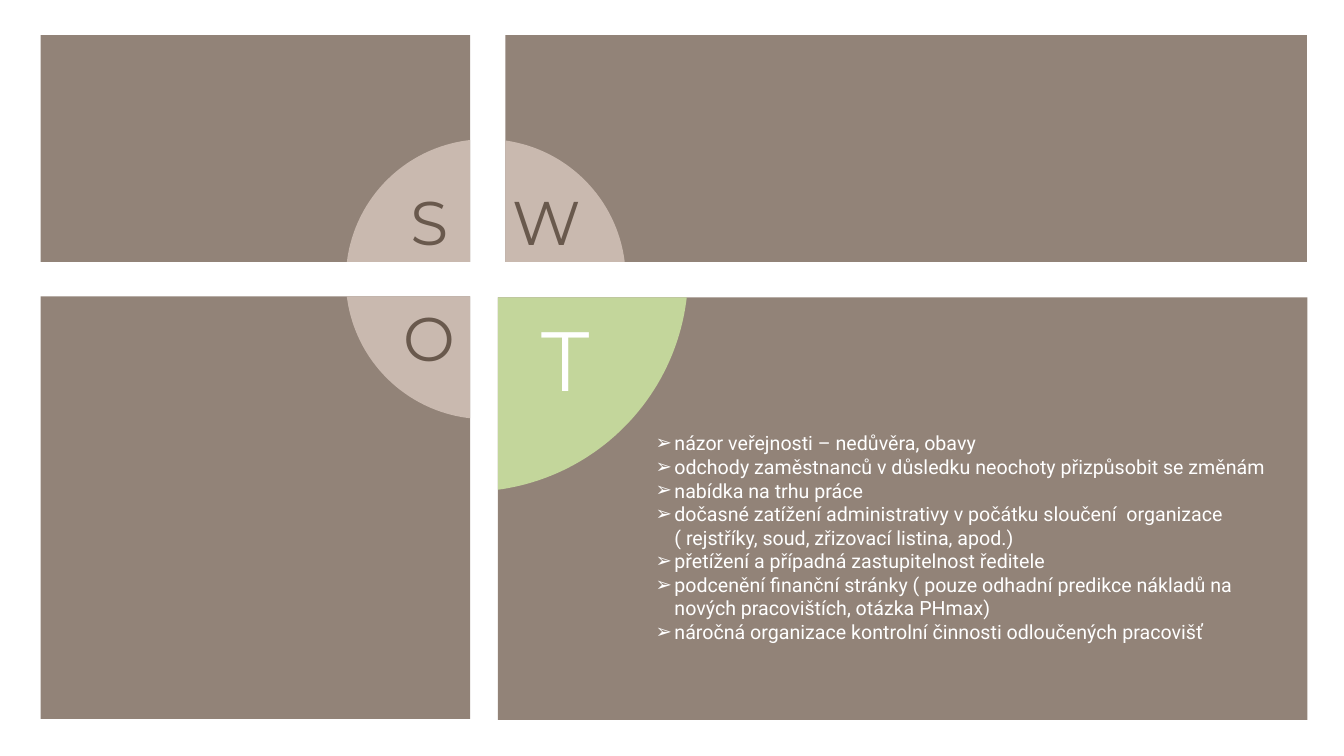
"""Builds a SWOT slide with the threats quadrant highlighted."""
import math

from lxml import etree
from pptx import Presentation
from pptx.dml.color import RGBColor
from pptx.enum.shapes import MSO_SHAPE
from pptx.enum.text import MSO_ANCHOR, PP_ALIGN
from pptx.oxml.ns import qn
from pptx.util import Pt

RECTANGLE = MSO_SHAPE.RECTANGLE
MIDDLE, BOTTOM = MSO_ANCHOR.MIDDLE, MSO_ANCHOR.BOTTOM
LEFT, CENTER = PP_ALIGN.LEFT, PP_ALIGN.CENTER

TAUPE = RGBColor(0x92, 0x83, 0x78)
BEIGE = RGBColor(0xC9, 0xB9, 0xAF)
GREEN = RGBColor(0xC3, 0xD6, 0x9B)
BROWN = RGBColor(0x69, 0x59, 0x4D)
WHITE = RGBColor(0xFF, 0xFF, 0xFF)

HUB = (347, 199.4, 100)
THREAT_HUB = (334.8, 194.4, 156.8)

THREATS = [
    "názor veřejnosti – nedůvěra, obavy",
    "odchody zaměstnanců v důsledku neochoty přizpůsobit se změnám",
    "nabídka na trhu práce",
    "dočasné zatížení administrativy v počátku sloučení  organizace ( rejstříky, soud, zřizovací listina, apod.)",
    "přetížení a případná zastupitelnost ředitele",
    "podcenění finanční stránky ( pouze odhadní predikce nákladů na nových pracovištích, otázka PHmax)",
    "náročná organizace kontrolní činnosti odloučených pracovišť",
]

# letter, panel box, wedge corner, circle, wedge colour, letter box, size, letter colour
QUADRANTS = [
    ("T", (355.7, 212.4, 578.2, 301.8), (355.7, 212.4), THREAT_HUB, GREEN,
     (385, 219.6, 38.2, 72.7), 60, WHITE),
    ("W", (361, 25, 572.5, 162), (361, 187), HUB, BEIGE,
     (364, 131, 52.6, 53.3), 44, BROWN),
    ("O", (29, 211.7, 306.8, 301.8), (335.8, 211.7), HUB, BEIGE,
     (287.3, 213.8, 38.2, 53.3), 44, BROWN),
    ("S", (29, 25, 306.8, 162), (335.8, 187), HUB, BEIGE,
     (292.3, 131, 28.8, 53.3), 44, BROWN),
]


class SwotSlide:
    """Draws styled elements on one slide, with lengths in points."""

    def __init__(self, slide):
        self.shapes = slide.shapes

    def paint(self, shape, color):
        shape.shadow.inherit = False
        shape.fill.solid()
        shape.fill.fore_color.rgb = color
        shape.line.fill.background()

    def panel(self, box, color):
        self.paint(self.shapes.add_shape(RECTANGLE, *map(Pt, box)), color)

    def wedge(self, corner, circle, color):
        (x, y), (center_x, center_y, radius) = corner, circle
        side_x = math.copysign(1, x - center_x)
        side_y = math.copysign(1, y - center_y)
        first = math.asin(abs(y - center_y) / radius)
        last = math.acos(abs(x - center_x) / radius)
        pull = 4 / 3 * math.tan((last - first) / 4)

        def on_circle(angle, tangent):
            across = math.cos(angle) - tangent * math.sin(angle)
            down = math.sin(angle) + tangent * math.cos(angle)
            return (Pt(center_x + side_x * radius * across),
                    Pt(center_y + side_y * radius * down))

        outline = self.shapes.build_freeform(Pt(x), Pt(y))
        outline.add_line_segments([on_circle(first, 0), on_circle(first, pull),
                                   on_circle(last, -pull), on_circle(last, 0)])
        wedge = outline.convert_to_shape()
        controls = wedge._element.findall(".//" + qn("a:lnTo"))[1:4]
        curve = etree.Element(qn("a:cubicBezTo"))
        controls[0].addprevious(curve)
        for control in controls:
            curve.append(control[0])
            control.getparent().remove(control)
        self.paint(wedge, color)

    def text(self, text, box, *, font, size, color, align=LEFT, anchor=MIDDLE,
             inset=(0, 0), wrap=False, bullet=None, indent=0):
        frame = self.shapes.add_textbox(*map(Pt, box)).text_frame
        frame.word_wrap = wrap
        frame.vertical_anchor = anchor
        frame.margin_left = frame.margin_right = Pt(inset[0])
        frame.margin_top = frame.margin_bottom = Pt(inset[1])
        frame.text = text
        for paragraph in frame.paragraphs:
            paragraph.alignment = align
            run_font = paragraph.runs[0].font
            run_font.name, run_font.size = font, Pt(size)
            run_font.color.rgb = color
            if bullet:
                properties = paragraph._p.get_or_add_pPr()
                properties.set("marL", str(Pt(indent)))
                properties.set("indent", str(-Pt(indent)))
                etree.SubElement(properties, qn("a:buFont")).set("typeface", font)
                etree.SubElement(properties, qn("a:buChar")).set("char", bullet)


def main():
    presentation = Presentation()
    presentation.slide_width, presentation.slide_height = Pt(960), Pt(540)
    swot = SwotSlide(presentation.slides.add_slide(presentation.slide_layouts[6]))

    for _, panel_box, *_ in QUADRANTS:
        swot.panel(panel_box, TAUPE)
    for _, _, corner, circle, wedge_color, *_ in QUADRANTS:
        swot.wedge(corner, circle, wedge_color)
    swot.text("\n".join(THREATS), (461.2, 286, 455.8, 177), font="Roboto", size=14,
              color=WHITE, anchor=BOTTOM, inset=(7.2, 3.6), wrap=True,
              bullet="➢", indent=13.5)
    for letter, *_, letter_box, size, letter_color in QUADRANTS:
        swot.text(letter, letter_box, font="Montserrat", size=size,
                  color=letter_color, align=CENTER)

    presentation.save("out.pptx")


if __name__ == "__main__":
    main()
